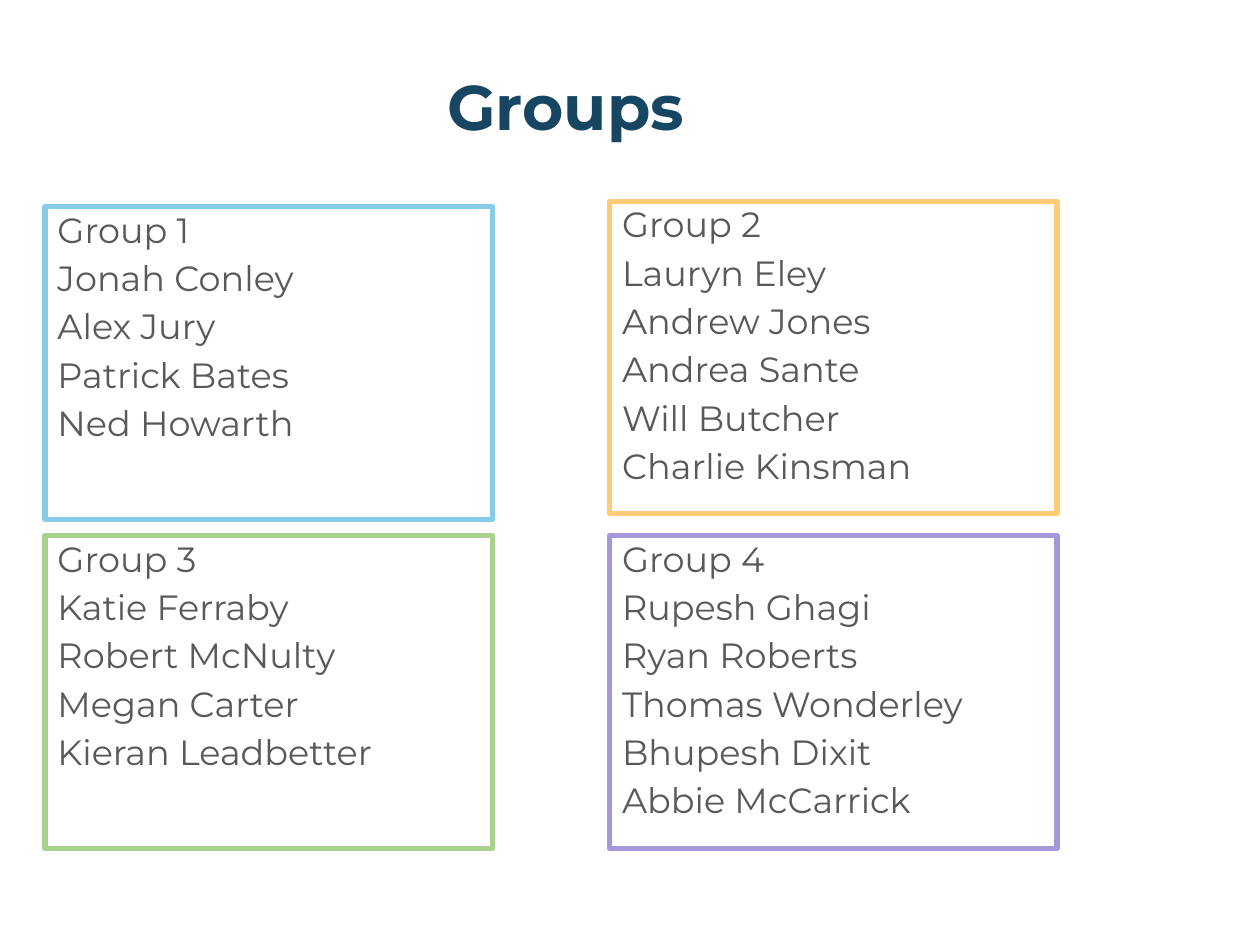
from pptx import Presentation
from pptx.dml.color import RGBColor
from pptx.enum.shapes import MSO_SHAPE
from pptx.enum.text import MSO_ANCHOR, PP_ALIGN
from pptx.util import Cm, Pt

RECTANGLE = MSO_SHAPE.RECTANGLE
TOP, MIDDLE = MSO_ANCHOR.TOP, MSO_ANCHOR.MIDDLE
LEFT, CENTER = PP_ALIGN.LEFT, PP_ALIGN.CENTER

NAVY = RGBColor(0x16, 0x46, 0x61)
GREY = RGBColor(0x59, 0x59, 0x59)
BLUE = RGBColor(0x86, 0xCC, 0xE8)
YELLOW = RGBColor(0xFC, 0xCD, 0x76)
GREEN = RGBColor(0xA9, 0xD1, 0x8E)
PURPLE = RGBColor(0xA7, 0x99, 0xD9)

LEFT_COL, RIGHT_COL = 0.91, 12.29
BOX_WIDTH, BOX_HEIGHT = 9.02, 6.3

GROUPS = [
    (LEFT_COL, 4.17, BLUE,
     ["Group 1", "Jonah Conley", "Alex Jury", "Patrick Bates", "Ned Howarth"]),
    (RIGHT_COL, 4.06, YELLOW,
     ["Group 2", "Lauryn Eley", "Andrew Jones", "Andrea Sante", "Will Butcher",
      "Charlie Kinsman"]),
    (LEFT_COL, 10.8, GREEN,
     ["Group 3", "Katie Ferraby", "Robert McNulty", "Megan Carter",
      "Kieran Leadbetter"]),
    (RIGHT_COL, 10.8, PURPLE,
     ["Group 4", "Rupesh Ghagi", "Ryan Roberts", "Thomas Wonderley",
      "Bhupesh Dixit", "Abbie McCarrick"]),
]


class SlideBuilder:
    font = "Montserrat"
    line_spacing = 0.9

    def __init__(self, slide):
        self.s = slide

    def set_text(self, tf, lines, size, color, align, anchor, bold=False, after=0):
        tf.word_wrap = True
        tf.vertical_anchor = anchor
        tf.text = "\n".join(lines)
        for p in tf.paragraphs:
            p.alignment = align
            p.line_spacing = self.line_spacing
            p.space_after = Pt(after)
            for r in p.runs:
                r.font.name = self.font
                r.font.size = Pt(size)
                r.font.bold = bold
                r.font.color.rgb = color

    def title(self, text, x, y, w, h):
        sp = self.s.shapes.add_textbox(Cm(x), Cm(y), Cm(w), Cm(h))
        self.set_text(sp.text_frame, [text], 36, NAVY, CENTER, MIDDLE, bold=True)

    def group_box(self, x, y, color, lines):
        sp = self.s.shapes.add_shape(
            RECTANGLE, Cm(x), Cm(y), Cm(BOX_WIDTH), Cm(BOX_HEIGHT))
        sp.shadow.inherit = False
        sp.fill.background()
        sp.line.color.rgb = color
        sp.line.width = Pt(3)
        self.set_text(sp.text_frame, lines, 20, GREY, LEFT, TOP, after=6)


def main():
    prs = Presentation()
    prs.slide_width, prs.slide_height = Cm(25.4), Cm(19.05)
    builder = SlideBuilder(prs.slides.add_slide(prs.slide_layouts[6]))
    builder.title("Groups", 0.46, 0.38, 21.89, 3.68)
    for group in GROUPS:
        builder.group_box(*group)
    prs.save("out.pptx")


if __name__ == "__main__":
    main()
